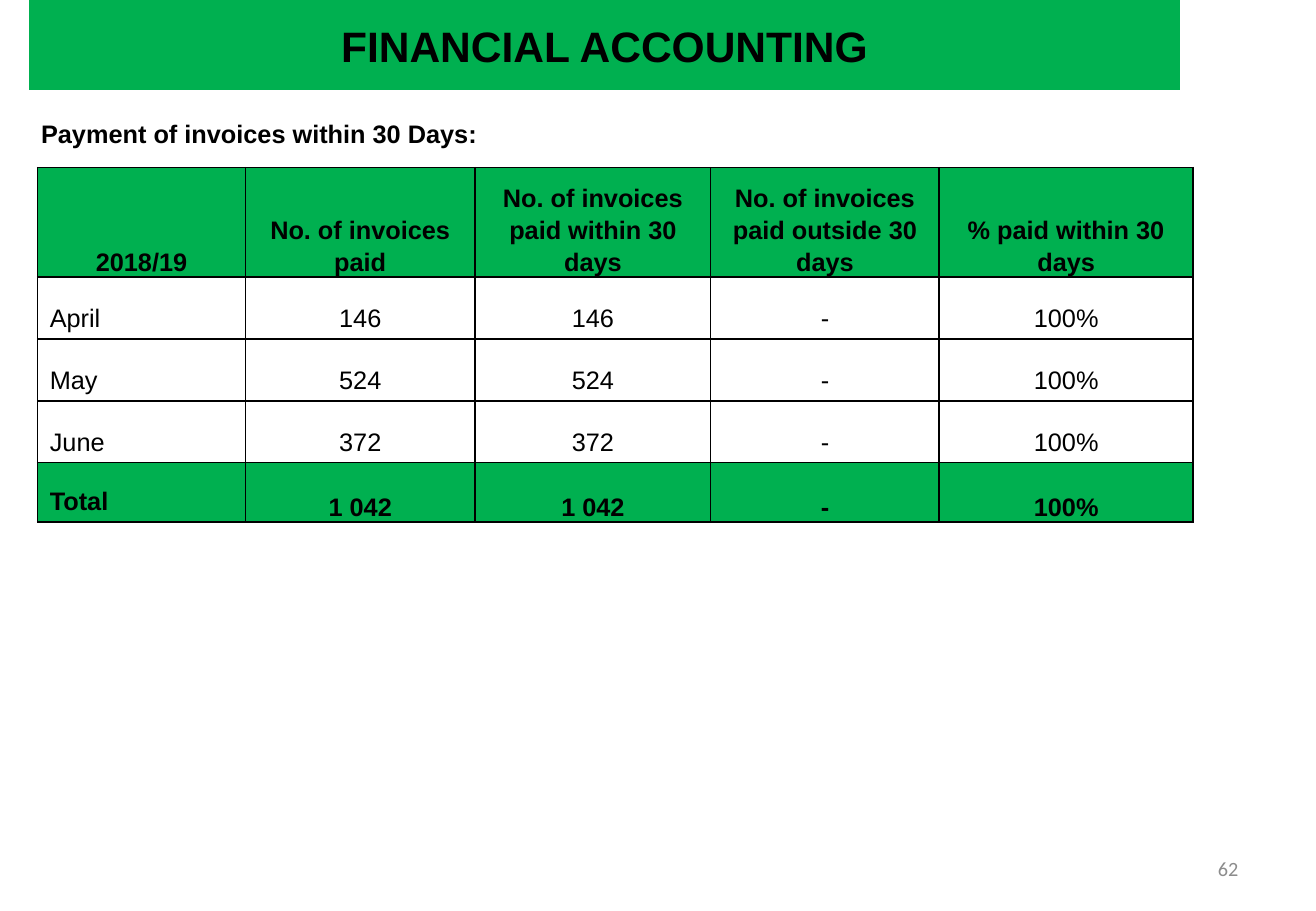
from dataclasses import dataclass

from lxml import etree
from pptx import Presentation
from pptx import util as u
from pptx.dml.color import RGBColor
from pptx.enum import shapes, text
from pptx.oxml import ns


@dataclass(frozen=True)
class Theme:
    green: str = "00B050"
    white: str = "FFFFFF"
    black: str = "000000"
    grey: str = "8C8C8C"
    font: str = "Arial"
    note: str = "Calibri"
    head: float = 25.2
    body: float = 15
    small: float = 12


LEFT, MID, RIGHT = text.PP_ALIGN.LEFT, text.PP_ALIGN.CENTER, text.PP_ALIGN.RIGHT


class Page:
    def __init__(self, deck, theme):
        self.theme = theme
        self.slide = deck.slides.add_slide(deck.slide_layouts[6])

    def letter(self, frame, words, size, align=LEFT, bold=False, color=None, font=None):
        frame.word_wrap = True
        para = frame.paragraphs[0]
        para.text = words
        para.alignment = align
        para.font.name = font or self.theme.font
        para.font.size = u.Pt(size)
        para.font.bold = bold
        para.font.color.rgb = RGBColor.from_string(color or self.theme.black)
        return para

    def label(self, box, words, size, **style):
        shape = self.slide.shapes.add_textbox(*map(u.Inches, box))
        shape.text_frame.vertical_anchor = text.MSO_ANCHOR.MIDDLE
        self.letter(shape.text_frame, words, size, **style)

    def banner(self, box, words):
        bar = self.slide.shapes.add_shape(shapes.MSO_SHAPE.RECTANGLE, *map(u.Inches, box))
        bar.shadow.inherit = False
        bar.fill.solid()
        bar.fill.fore_color.rgb = RGBColor.from_string(self.theme.green)
        bar.line.fill.background()
        frame = bar.text_frame
        frame.vertical_anchor = text.MSO_ANCHOR.MIDDLE
        frame.margin_top = u.Inches(0.1)
        self.letter(frame, words, self.theme.head, align=MID, bold=True)

    def border(self, cell):
        props = cell._tc.get_or_add_tcPr()
        # Borders come before the fill in the cell properties
        for spot, side in enumerate(("lnL", "lnR", "lnT", "lnB")):
            line = etree.Element(ns.qn(f"a:{side}"), w=str(u.Pt(1)))
            fill = etree.SubElement(line, ns.qn("a:solidFill"))
            etree.SubElement(fill, ns.qn("a:srgbClr"), val=self.theme.black)
            props.insert(spot, line)

    def table(self, left, top, widths, heights, rows):
        grid = self.slide.shapes.add_table(
            len(rows), len(widths), u.Inches(left), u.Inches(top),
            u.Inches(sum(widths)), u.Inches(sum(heights))).table
        for col, width in zip(grid.columns, widths):
            col.width = u.Inches(width)
        for row, height in zip(grid.rows, heights):
            row.height = u.Inches(height)
        last = len(rows) - 1
        for r, row in enumerate(rows):
            for c, words in enumerate(row):
                cell = grid.cell(r, c)
                strong = r in (0, last)
                cell.fill.solid()
                cell.fill.fore_color.rgb = RGBColor.from_string(
                    self.theme.green if strong else self.theme.white)
                cell.vertical_anchor = text.MSO_ANCHOR.BOTTOM
                para = self.letter(cell.text_frame, words, self.theme.body,
                                   align=MID if r == 0 or c else LEFT, bold=strong)
                # Header and total figures sit on the cell floor
                if r == 0 or (r == last and c):
                    para.line_spacing = 1.15
                    cell.margin_left = cell.margin_right = u.Inches(0.07)
                    cell.margin_top = cell.margin_bottom = 0
                self.border(cell)


def main():
    deck = Presentation()
    deck.slide_width, deck.slide_height = u.Inches(10.83), u.Inches(7.5)
    theme = Theme()
    page = Page(deck, theme)

    # Page number
    page.label((7.76, 6.95, 2.53, 0.4), "62", theme.small,
               align=RIGHT, color=theme.grey, font=theme.note)

    # Title and heading
    page.banner((0.24, -0.04, 9.47, 0.78), "FINANCIAL ACCOUNTING")
    page.label((0.24, 0.92, 10.2, 0.35), "Payment of invoices within 30 Days:",
               theme.body, bold=True)

    # Invoice table: every invoice was paid on time
    paid = [("April", "146"), ("May", "524"), ("June", "372"), ("Total", "1 042")]
    rows = [("2018/19", "No. of invoices paid", "No. of invoices paid within 30 days",
             "No. of invoices paid outside 30 days", "% paid within 30 days")]
    rows += [(month, count, count, "-", "100%") for month, count in paid]
    page.table(0.31, 1.38, (1.71, 1.89, 1.94, 1.88, 2.09),
               (0.9, 0.51, 0.51, 0.51, 0.49), rows)

    deck.save("out.pptx")


if __name__ == "__main__":
    main()
